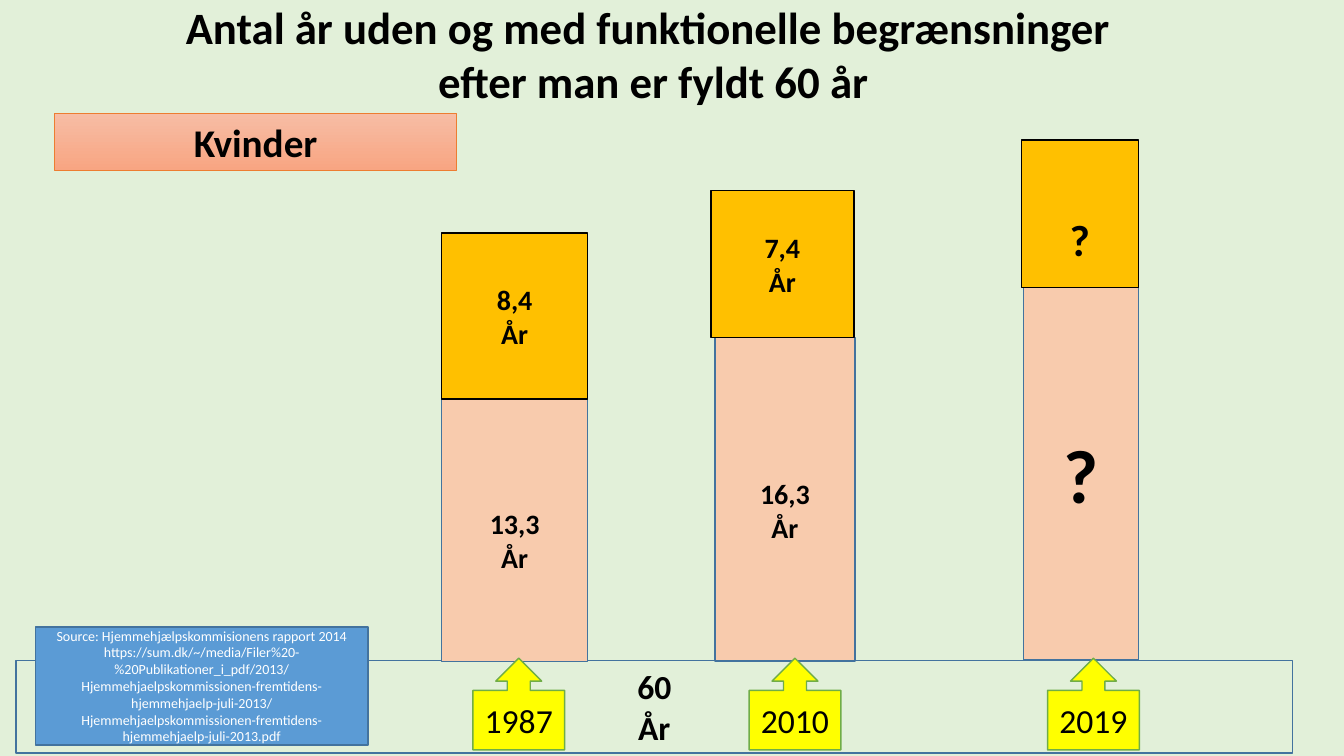
"""Build a slide on years lived with and without functional limitations after 60."""
from pptx import Presentation
from pptx.dml.color import RGBColor
from pptx.enum import shapes, text
from pptx.util import Inches, Pt


def colour(code):
    return RGBColor.from_string(code)


def write(shape, lines, size, ink="000000", bold=True):
    frame = shape.text_frame
    frame.word_wrap = True
    frame.auto_size = text.MSO_AUTO_SIZE.NONE
    frame.vertical_anchor = text.MSO_ANCHOR.MIDDLE
    for index, line in enumerate(lines):
        para = frame.add_paragraph() if index else frame.paragraphs[0]
        para.alignment = text.PP_ALIGN.CENTER
        span = para.add_run()
        span.text = line
        span.font.name = "Calibri"
        span.font.size = Pt(size)
        span.font.bold = bold
        span.font.color.rgb = colour(ink)


def add_box(place, fill, line, lines, size, ink="000000", bold=True,
            kind=shapes.MSO_SHAPE.RECTANGLE):
    box = page.shapes.add_shape(kind, *map(Inches, place))
    box.shadow.inherit = False
    box.fill.solid()
    box.fill.fore_color.rgb = colour(fill)
    box.line.color.rgb = colour(line)
    box.line.width = Pt(1)
    write(box, lines, size, ink, bold)
    return box


deck = Presentation()
deck.slide_width, deck.slide_height = Inches(13.33), Inches(7.5)
page = deck.slides.add_slide(deck.slide_layouts[5])
page.background.fill.solid()
page.background.fill.fore_color.rgb = colour("E2F0D9")

title = page.shapes.title
title.left, title.top = Inches(0.69), Inches(0.15)
title.width, title.height = Inches(11.58), Inches(0.77)
write(title, ["Antal år uden og med funktionelle begrænsninger ",
              "efter man er fyldt 60 år"], 32)

label = add_box((0.54, 1.12, 3.99, 0.57), "F5B196", "ED7D31", ["Kvinder"], 28)
label.line.width = Pt(0.5)
label.fill.gradient()
label.fill.gradient_angle = 270
for stop, shade in zip(label.fill.gradient_stops, ["F7BDA5", "F8A582"]):
    stop.color.rgb = colour(shade)

add_box((0.16, 6.55, 12.66, 0.92), "E2F0D9", "43739E", ["60", "År"], 24)

columns = [
    ("1987", 4.69, (4.38, 3.94, 1.45, 2.62), "13,3", (4.38, 2.31, 1.45, 1.65), "8,4"),
    ("2010", 7.43, (7.09, 3.35, 1.39, 3.21), "16,3", (7.05, 1.89, 1.42, 1.46), "7,4"),
    ("2019", 10.39, (10.15, 2.85, 1.14, 3.7), "?", (10.13, 1.39, 1.16, 1.46), "?"),
]
for year, arrow_left, healthy_place, healthy, limited_place, limited in columns:
    known = healthy != "?"
    unit, size = (["År"], 20) if known else ([], 54)
    lower = add_box(healthy_place, "F8CBAD", "43739E", [healthy] + unit, size)
    upper = add_box(limited_place, "FFC000", "000000", [limited] + unit, size)
    if known:
        lower.text_frame.margin_top = Inches(0.27)
    else:
        span = upper.text_frame.paragraphs[0].runs[0]
        span.font._element.set("baseline", "-25000")
    add_box((arrow_left, 6.53, 0.91, 0.91), "FFFF00", "70AD47", [year], 24,
            bold=False, kind=shapes.MSO_SHAPE.UP_ARROW_CALLOUT)

address = ("https://sum.dk/~/media/Filer%20-%20Publikationer_i_pdf/2013/"
           "Hjemmehjaelpskommissionen-fremtidens-hjemmehjaelp-juli-2013/"
           "Hjemmehjaelpskommissionen-fremtidens-hjemmehjaelp-juli-2013.pdf")
add_box((0.35, 6.22, 3.3, 1.17), "5B9BD5", "43739E",
        ["Source: Hjemmehjælpskommisionens rapport 2014", address],
        10, "FFFFFF", False)

deck.save("out.pptx")
